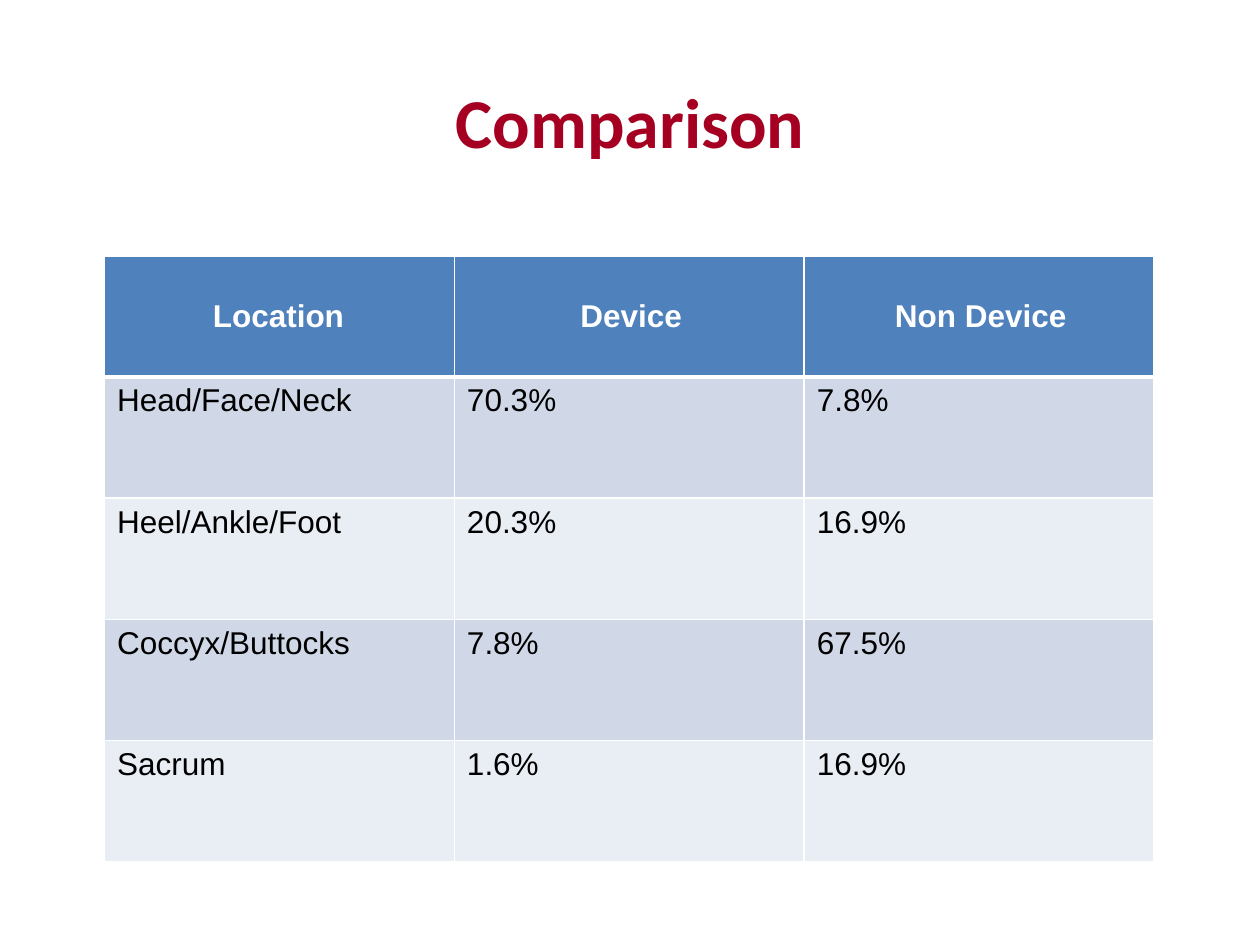
from pptx import Presentation
from pptx.dml.color import RGBColor
from pptx.enum.text import MSO_ANCHOR, PP_ALIGN
from pptx.oxml.ns import qn
from pptx.util import Inches, Pt
from lxml import etree

MIDDLE, TOP = MSO_ANCHOR.MIDDLE, MSO_ANCHOR.TOP
CENTER = PP_ALIGN.CENTER
TITLE_ONLY = 5

WHITE, BLACK, CRIMSON = "FFFFFF", "000000", "A50021"
HEADER_FILL = "4F81BD"
BAND_FILLS = ("D0D8E8", "E9EDF4")

HEADINGS = ("Location", "Device", "Non Device")
HEADING_INSETS = (0.86, 1.0, 0.72)
LOCATIONS = (
    ("Head/Face/Neck", "70.3%", "7.8%"),
    ("Heel/Ankle/Foot", "20.3%", "16.9%"),
    ("Coccyx/Buttocks", "7.8%", "67.5%"),
    ("Sacrum", "1.6%", "16.9%"),
)


def color(value):
    return RGBColor.from_string(value)


def add_span(para, text, font, size, ink, bold):
    span = para.add_run()
    span.text = text
    span.font.name = font
    span.font.size = Pt(size)
    span.font.bold = bold
    span.font.color.rgb = color(ink)


def set_borders(cell, top, bottom):
    """Draw white cell borders; top and bottom are widths in points."""
    properties = cell._tc.get_or_add_tcPr()
    for tag, width in (("a:lnL", 1), ("a:lnR", 1), ("a:lnT", top), ("a:lnB", bottom)):
        line = etree.SubElement(properties, qn(tag), w=str(Pt(width)))
        fill = etree.SubElement(line, qn("a:solidFill"))
        etree.SubElement(fill, qn("a:srgbClr"), val=WHITE)


def format_cell(cell, text, fill, ink, bold, anchor, inset=0.1, top=1, bottom=1):
    set_borders(cell, top, bottom)
    cell.fill.solid()
    cell.fill.fore_color.rgb = color(fill)
    cell.vertical_anchor = anchor
    cell.margin_left = Inches(inset)
    add_span(cell.text_frame.paragraphs[0], text, "Arial", 18, ink, bold)


def place_title(page, left, top, width, height):
    title = page.shapes.title
    title.left, title.top = Inches(left), Inches(top)
    title.width, title.height = Inches(width), Inches(height)
    title.text_frame.vertical_anchor = MIDDLE
    para = title.text_frame.paragraphs[0]
    para.alignment = CENTER
    add_span(para, "Comparison", "Calibri", 40, CRIMSON, True)


def add_comparison_table(page, left, top, width, height):
    table = page.shapes.add_table(
        len(LOCATIONS) + 1, len(HEADINGS),
        Inches(left), Inches(top), Inches(width), Inches(height),
    ).table
    for column, (heading, inset) in enumerate(zip(HEADINGS, HEADING_INSETS)):
        format_cell(table.cell(0, column), heading, HEADER_FILL, WHITE, True,
                    MIDDLE, inset=inset, bottom=3)
    for row, values in enumerate(LOCATIONS, start=1):
        fill = BAND_FILLS[(row - 1) % 2]
        for column, value in enumerate(values):
            format_cell(table.cell(row, column), value, fill, BLACK, False,
                        TOP, top=3 if row == 1 else 1)


def main():
    deck = Presentation()
    deck.slide_width, deck.slide_height = Inches(10), Inches(7.5)
    page = deck.slides.add_slide(deck.slide_layouts[TITLE_ONLY])
    place_title(page, 0.75, 0.33, 8.5, 1.25)
    add_comparison_table(page, 0.83, 2.03, 8.33, 4.81)
    deck.save("out.pptx")


if __name__ == "__main__":
    main()
